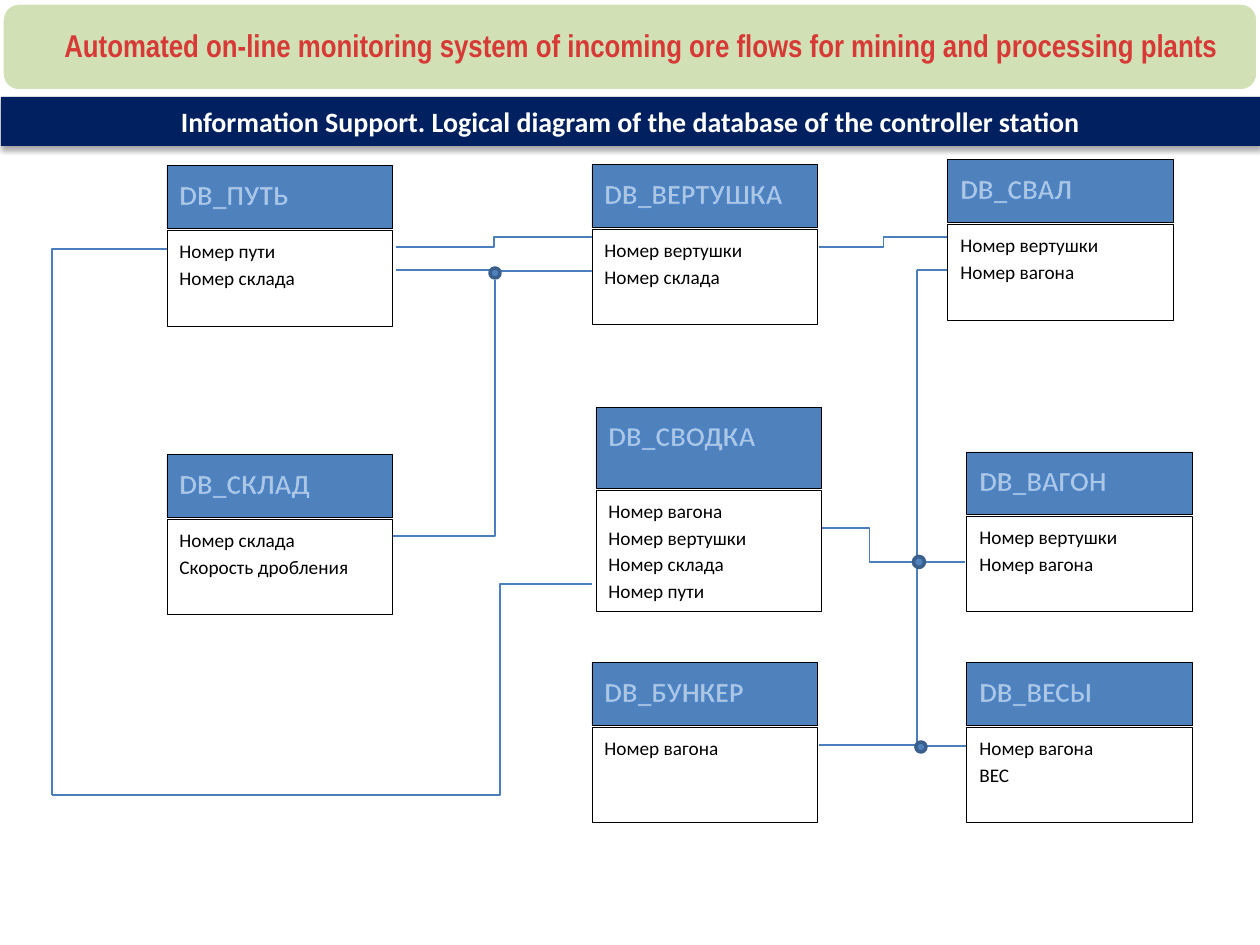
from lxml.etree import SubElement
from pptx import Presentation
from pptx.dml.color import RGBColor
from pptx.enum.shapes import MSO_CONNECTOR, MSO_SHAPE
from pptx.enum.text import MSO_ANCHOR, PP_ALIGN
from pptx.oxml import parse_xml
from pptx.oxml.ns import nsdecls, qn
from pptx.util import Emu, Pt

SCALE = 914400 / 126
HEAD, BODY, WIDE = 63, 96, 226

TABLES = [
    (167, 166, "DB_ПУТЬ", ["Номер пути", "Номер склада"]),
    (167, 455, "DB_СКЛАД", ["Номер склада", "Скорость дробления"]),
    (592, 165, "DB_ВЕРТУШКА", ["Номер вертушки", "Номер склада"]),
    (948, 160, "DB_СВАЛ", ["Номер вертушки", "Номер вагона"]),
    (967, 452, "DB_ВАГОН", ["Номер вертушки", "Номер вагона"]),
    (967, 663, "DB_ВЕСЫ", ["Номер вагона", "ВЕС"]),
    (592, 663, "DB_БУНКЕР", ["Номер вагона"]),
]
SUMMARY = ["Номер вагона", "Номер вертушки", "Номер склада", "Номер пути"]

# x1, y1, x2, y2, share of the width before the bend
BENDS = [
    (965, 562, 917, 270, 1),
    (967, 746, 917, 562, 1),
    (393, 536, 495, 280, 1),
    (396, 270, 592, 271, 0.5),
    (396, 247, 592, 237, 0.5),
    (819, 247, 948, 237, 0.5),
    (822, 528, 917, 562, 0.5),
    (52, 795, 592, 584, 0.83),
    (167, 249, 52, 795, 1),
]
LINES = [(917, 270, 948, 270), (819, 745, 917, 745)]
DOTS = [(495, 273, 10), (921, 747, 10), (919, 562, 11)]


def px(n):
    return Emu(round(n * SCALE))


def paint(hue):
    return RGBColor.from_string(hue)


def block(slide, kind, box, fill, line=None, width=0.5):
    shape = slide.shapes.add_shape(kind, *map(px, box))
    shape.shadow.inherit = False
    shape.fill.solid()
    shape.fill.fore_color.rgb = paint(fill)
    if line:
        shape.line.color.rgb = paint(line)
        shape.line.width = Pt(width)
    else:
        shape.line.fill.background()
    return shape


def write(shape, lines, size=11, color="000000", font="Calibri", bold=False,
          align=PP_ALIGN.LEFT, anchor=MSO_ANCHOR.TOP, space=1.15, edge=None):
    frame = shape.text_frame
    frame.word_wrap = True
    frame.vertical_anchor = anchor
    for i, line in enumerate(lines):
        para = frame.add_paragraph() if i else frame.paragraphs[0]
        para.alignment = align
        para.line_spacing = space
        run = para.add_run()
        run.text = line
        run.font.size = Pt(size)
        run.font.name = font
        run.font.bold = bold
        run.font.color.rgb = paint(color)
        if edge:
            run.font._element.insert(0, parse_xml(
                f'<a:ln {nsdecls("a")} w="500"><a:solidFill><a:srgbClr val="{edge}">'
                '<a:alpha val="55000"/></a:srgbClr></a:solidFill></a:ln>'))


def table(slide, x, y, name, fields, head=HEAD, body=BODY, gap=1):
    """Draw a database table as a heading over a list of fields."""
    top = block(slide, MSO_SHAPE.RECTANGLE, (x, y, WIDE, head), "4F81BD", "000000")
    write(top, [name], size=16, color="FFFFFF", bold=True, edge="1D7DEE")
    low = block(slide, MSO_SHAPE.RECTANGLE, (x, y + head + gap, WIDE, body),
                "FFFFFF", "000000")
    write(low, fields)


def link(slide, x1, y1, x2, y2, bend=None):
    """Join two points, straight or with a bend at a share of the width."""
    kind = MSO_CONNECTOR.STRAIGHT if bend is None else MSO_CONNECTOR.ELBOW
    wire = slide.shapes.add_connector(kind, *map(px, (x1, y1, x2, y2)))
    wire.line.color.rgb = paint("4B7EBC")
    wire.line.width = Pt(0.75)
    props = wire._element.spPr
    SubElement(props, qn("a:effectLst"))
    if bend is not None:
        guides = props.find(qn("a:prstGeom")).find(qn("a:avLst"))
        SubElement(guides, qn("a:gd"), name="adj1", fmla=f"val {round(bend * 100000)}")


def banner(slide, box):
    shape = block(slide, MSO_SHAPE.ROUNDED_RECTANGLE, box, "D2E1B5", "FFFFFF", 2)
    shape.adjustments[0] = 0.19
    write(shape, ["Automated on-line monitoring system of incoming ore flows "
                  "for mining and processing plants"],
          size=18, color="D73A36", font="Arial Narrow", bold=True,
          align=PP_ALIGN.CENTER, anchor=MSO_ANCHOR.MIDDLE, space=0.9)
    shape.text_frame.margin_left = px(35)


def topic(slide, box):
    shape = block(slide, MSO_SHAPE.RECTANGLE, box, "002060")
    write(shape, ["Information Support. Logical diagram of the database "
                  "of the controller station"],
          size=16, color="FFFFFF", bold=True, align=PP_ALIGN.CENTER,
          anchor=MSO_ANCHOR.MIDDLE, space=1)
    shape._element.spPr.find(qn("a:effectLst")).append(parse_xml(
        f'<a:outerShdw {nsdecls("a")} blurRad="39370" dist="22860" dir="5400000" '
        'rotWithShape="0"><a:srgbClr val="000000"><a:alpha val="35000"/>'
        '</a:srgbClr></a:outerShdw>'))


def schema(slide):
    for ends in BENDS + LINES:
        link(slide, *ends)
    for item in TABLES:
        table(slide, *item)
    table(slide, 596, 407, "DB_СВОДКА", SUMMARY, head=81, body=122, gap=2)
    for x, y, size in DOTS:
        box = (x - size / 2, y - size / 2, size, size)
        block(slide, MSO_SHAPE.OVAL, box, "4F81BD", "3A5F8C", 2)


def main():
    deck = Presentation()
    deck.slide_width, deck.slide_height = px(1260), px(945)
    slide = deck.slides.add_slide(deck.slide_layouts[6])
    schema(slide)
    topic(slide, (1, 97, 1259, 49))
    banner(slide, (2, 3, 1256, 88))
    deck.save("out.pptx")


if __name__ == "__main__":
    main()
